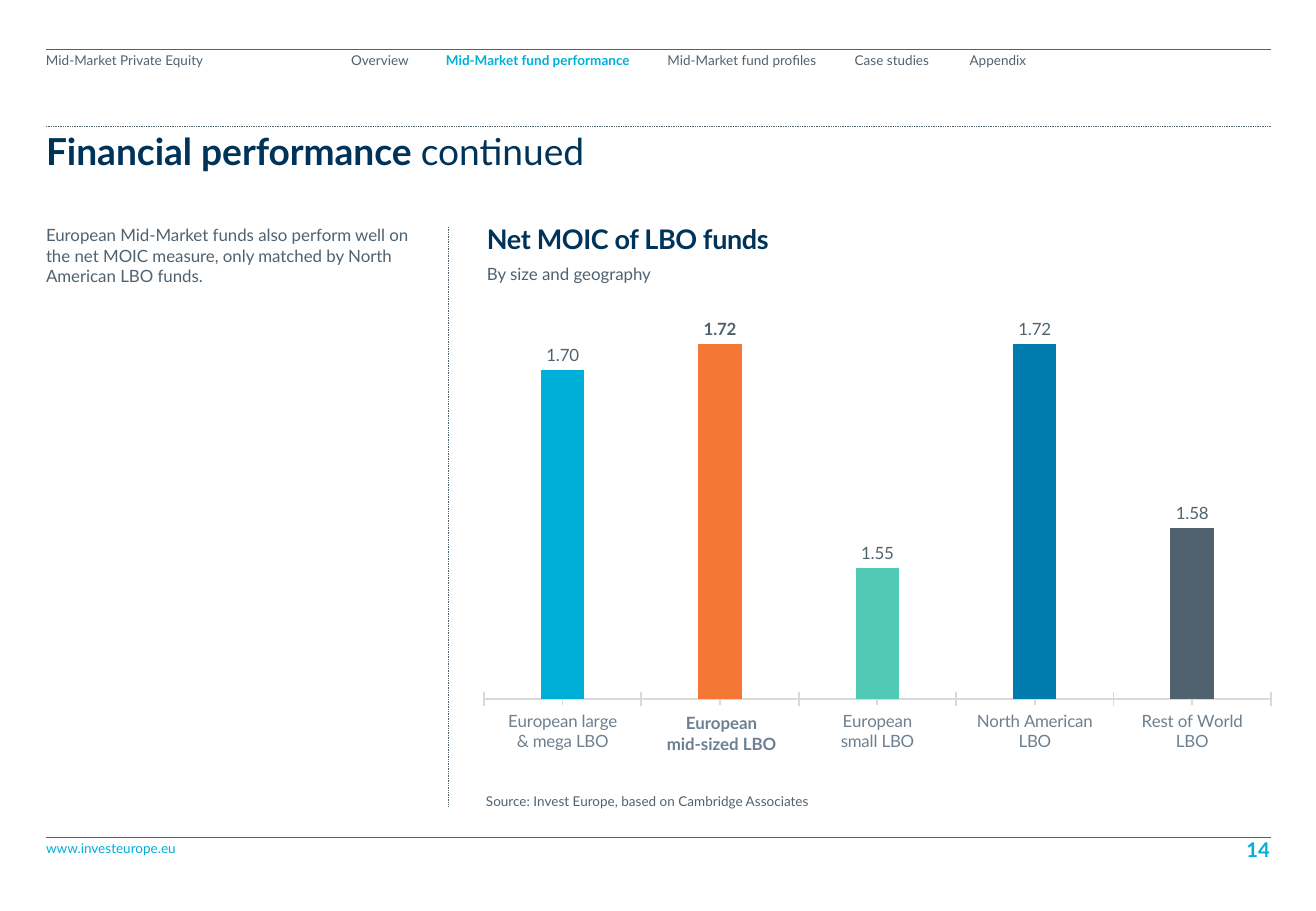
from lxml.etree import SubElement
from pptx import Presentation
from pptx.chart.data import CategoryChartData
from pptx.dml.color import RGBColor
from pptx.enum.chart import XL_CHART_TYPE, XL_LABEL_POSITION, XL_TICK_MARK
from pptx.enum.dml import MSO_LINE
from pptx.enum.shapes import MSO_CONNECTOR
from pptx.enum.text import MSO_ANCHOR, MSO_AUTO_SIZE, PP_ALIGN
from pptx.oxml import parse_xml
from pptx.oxml.ns import nsdecls, qn
from pptx.util import Pt

SCALE = 7526
FONT = "Lato"
LEFT, RIGHT = 46, 1271
COLORS = {
    "slate": "51626F",
    "cyan": "00AFD8",
    "navy": "003359",
    "orange": "F47735",
    "green": "50C9B5",
    "blue": "007BAD",
    "label": "6E8090",
    "axis": "D9D9D9",
}
TABS = [
    ("Overview", 341, 78),
    ("Mid-Market fund performance", 442, 192),
    ("Mid-Market fund profiles", 663, 158),
    ("Case studies", 850, 84),
    ("Appendix", 965, 66),
]
ACTIVE = "Mid-Market fund performance"
FUNDS = [
    ("European large\n& mega LBO", 1.70, "cyan"),
    ("", 1.72, "orange"),
    ("European\nsmall LBO", 1.55, "green"),
    ("North American\nLBO", 1.72, "blue"),
    ("Rest of World\nLBO", 1.58, "slate"),
]
FOCUS = 1


def px(num):
    """Turn pixels into EMU."""
    return int(num * SCALE)


def tint(name):
    """Look up a colour by name."""
    return RGBColor.from_string(COLORS[name])


def style(font, size, color, bold=False):
    """Set the face, size, colour and weight of a font."""
    font.name = FONT
    font.size = Pt(size)
    font.bold = bold
    font.color.rgb = tint(color)


def place(shape, box):
    """Move a shape to a pixel box."""
    shape.left, shape.top, shape.width, shape.height = map(px, box)


def fill_text(shape, runs, size, color, align=PP_ALIGN.LEFT, anchor=MSO_ANCHOR.TOP,
              inset=(0, 0, 0, 0), lead=1.0, track=0, after=0):
    """Write (text, bold) runs as one paragraph of a shape."""
    frame = shape.text_frame
    frame.word_wrap = True
    frame.auto_size = MSO_AUTO_SIZE.NONE
    frame.vertical_anchor = anchor
    (frame.margin_left, frame.margin_top,
     frame.margin_right, frame.margin_bottom) = map(px, inset)
    para = frame.paragraphs[0]
    para.alignment = align
    para.line_spacing = lead
    para.space_before = Pt(0)
    para.space_after = Pt(after)
    for text, bold in runs:
        for index, line in enumerate(text.split("\n")):
            if index:
                para.add_line_break()
            run = para.add_run()
            run.text = line
            style(run.font, size, color, bold)
            if track:
                run._r.get_or_add_rPr().set("spc", str(track))


def add_text(slide, box, text, size, color, bold=False, **look):
    """Add a text box with one run."""
    shape = slide.shapes.add_textbox(*map(px, box))
    fill_text(shape, [(text, bold)], size, color, **look)


def fill_body(shape, box, text, after=0):
    """Use a body placeholder for plain text."""
    place(shape, box)
    props = shape.text_frame.paragraphs[0]._p.get_or_add_pPr()
    props.set("marL", "0")
    props.set("indent", "0")
    SubElement(props, qn("a:buNone"))
    fill_text(shape, [(text, False)], 10, "slate", after=after)


def add_rule(slide, start, end, dotted=False):
    """Draw a thin straight rule."""
    rule = slide.shapes.add_connector(MSO_CONNECTOR.STRAIGHT, *map(px, start + end))
    rule.line.color.rgb = tint("slate")
    rule.line.width = Pt(0.5)
    if dotted:
        rule.line.dash_style = MSO_LINE.ROUND_DOT
    SubElement(rule._element.spPr, qn("a:effectLst"))


def set_plot(chart, left, top, width, height):
    """Fix the inner plot area as shares of the chart."""
    area = chart._chartSpace.chart.plotArea
    for old in area.findall(qn("c:layout")):
        area.remove(old)
    area.insert(0, parse_xml(
        f'<c:layout {nsdecls("c")}><c:manualLayout><c:layoutTarget val="inner"/>'
        f'<c:xMode val="edge"/><c:yMode val="edge"/><c:x val="{left}"/><c:y val="{top}"/>'
        f'<c:w val="{width}"/><c:h val="{height}"/></c:manualLayout></c:layout>'))


def add_bars(slide, box):
    """Add the column chart of fund multiples."""
    data = CategoryChartData(number_format="0.00")
    data.categories = [name for name, _, _ in FUNDS]
    data.add_series("Series 1", [value for _, value, _ in FUNDS])
    chart = slide.shapes.add_chart(
        XL_CHART_TYPE.COLUMN_CLUSTERED, *map(px, box), data).chart
    chart.has_title = False
    chart.has_legend = False
    style(chart.font, 10, "slate")
    set_plot(chart, 0.023, 0.037, 0.955, 0.793)

    scale = chart.value_axis
    scale.minimum_scale, scale.maximum_scale = 1.45, 1.75
    scale.has_major_gridlines = False
    scale.visible = False
    axis = chart.category_axis
    axis.major_tick_mark = axis.minor_tick_mark = XL_TICK_MARK.CROSS
    axis.format.line.color.rgb = tint("axis")
    axis.format.line.width = Pt(1)
    style(axis.tick_labels.font, 10, "label")

    plot = chart.plots[0]
    plot.gap_width, plot.overlap = 265, -27
    plot.vary_by_categories = False
    bars = plot.series[0]
    bars.invert_if_negative = False
    for index, (_, _, color) in enumerate(FUNDS):
        fill = bars.points[index].format.fill
        fill.solid()
        fill.fore_color.rgb = tint(color)
    labels = bars.data_labels
    labels.show_value = True
    labels.position = XL_LABEL_POSITION.OUTSIDE_END
    labels.number_format = "#,##0.00"
    labels.number_format_is_linked = False
    style(labels.font, 10, "slate")
    focus = bars.points[FOCUS].data_label
    style(focus.font, 10, "slate", True)
    focus.position = XL_LABEL_POSITION.OUTSIDE_END


def add_frame(slide):
    """Add the rules, navigation and footer."""
    for level, dotted in ((49, False), (837, False), (126, True)):
        add_rule(slide, (LEFT, level), (RIGHT, level), dotted)
    inset = (0, 5, 0, 0)
    add_text(slide, (LEFT, 49, 230, 56), "Mid-Market Private Equity", 8, "slate",
             inset=inset, lead=0.9)
    for text, left, width in TABS:
        active = text == ACTIVE
        add_text(slide, (left, 49, width, 19), text, 8, "cyan" if active else "slate",
                 active, align=PP_ALIGN.CENTER, inset=inset, lead=0.9)
    add_text(slide, (LEFT, 840, 445, 16), "www.investeurope.eu", 8, "cyan")
    add_text(slide, (974, 838, 296, 24), "14", 12, "cyan", True,
             align=PP_ALIGN.RIGHT, anchor=MSO_ANCHOR.BOTTOM)


def main():
    """Build the slide and save it."""
    deck = Presentation()
    deck.slide_width, deck.slide_height = px(1316), px(911)
    slide = deck.slides.add_slide(deck.slide_layouts[3])
    title, intro, sub = slide.placeholders
    add_frame(slide)
    place(title, (LEFT, 128, 1225, 50))
    fill_text(title, [("Financial performance ", True), ("continued", False)],
              22, "navy", inset=(0, 5, 0, 5), lead=0.9)
    fill_body(intro, (LEFT, 225, 383, 474),
              "European Mid-Market funds also perform well on the net MOIC measure, "
              "only matched by North American LBO funds.", after=8)
    add_text(slide, (487, 226, 677, 29), "Net MOIC of LBO funds", 16, "navy", True,
             lead=0.9, track=-20)
    fill_body(sub, (487, 264, 802, 36), "By size and geography")
    add_text(slide, (486, 795, 665, 22),
             "Source: Invest Europe, based on Cambridge Associates", 8, "slate", lead=0.9)
    add_rule(slide, (448, 227), (448, 807), True)
    add_bars(slide, (465, 286, 824, 498))
    add_text(slide, (649, 707, 145, 53), "European\nmid-sized LBO", 10, "label", True,
             align=PP_ALIGN.CENTER, inset=(12, 6, 12, 6))
    deck.save("out.pptx")


if __name__ == "__main__":
    main()
